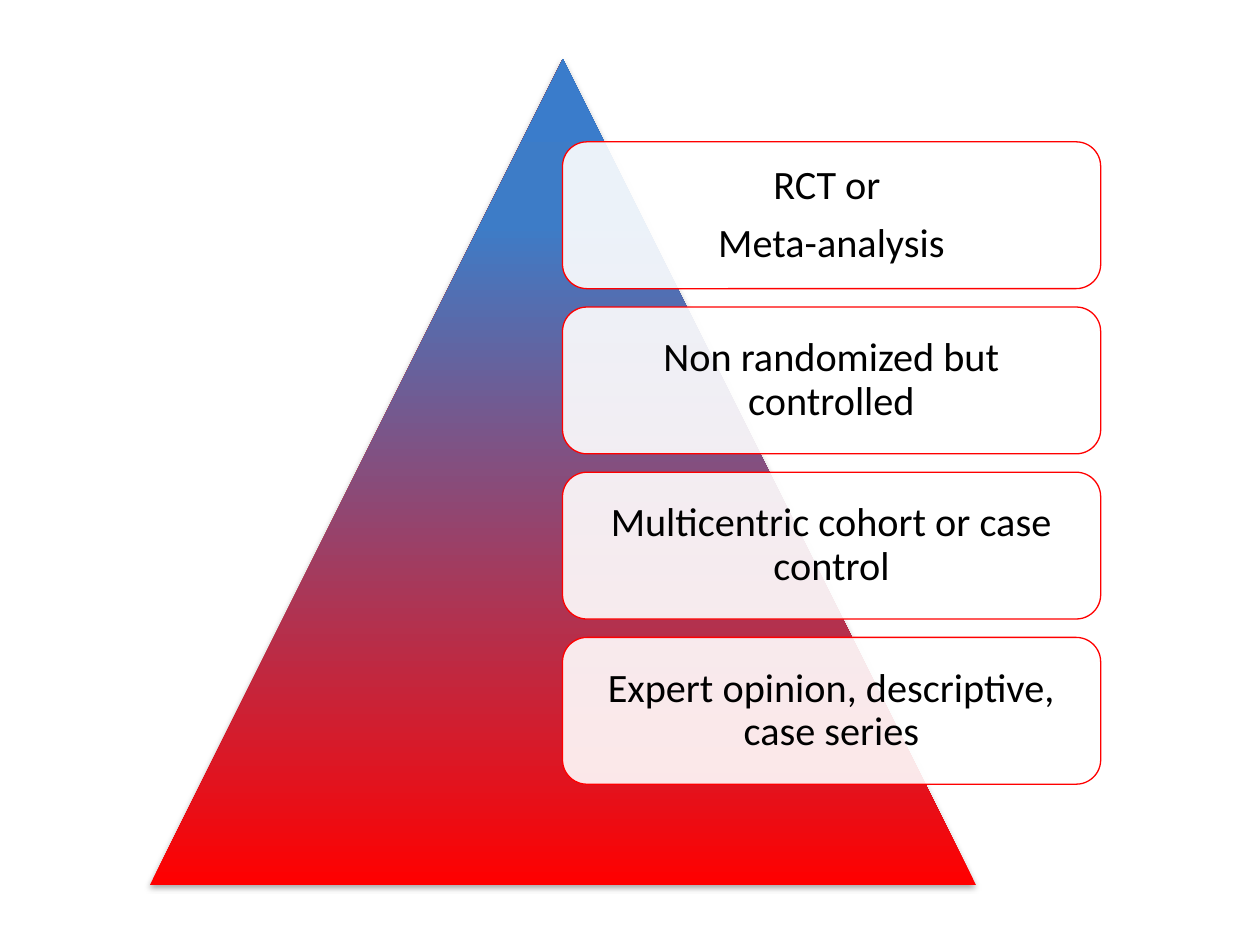
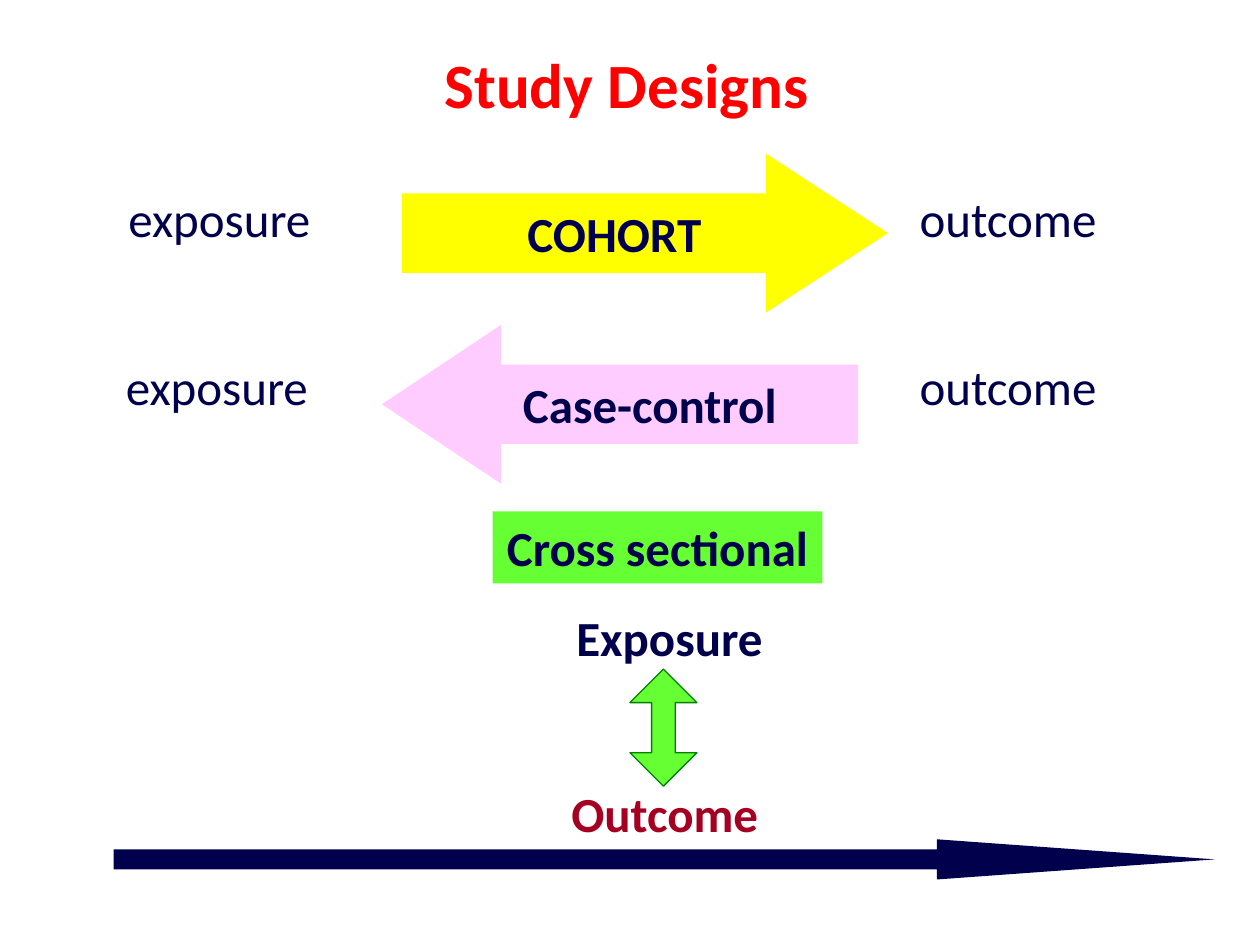
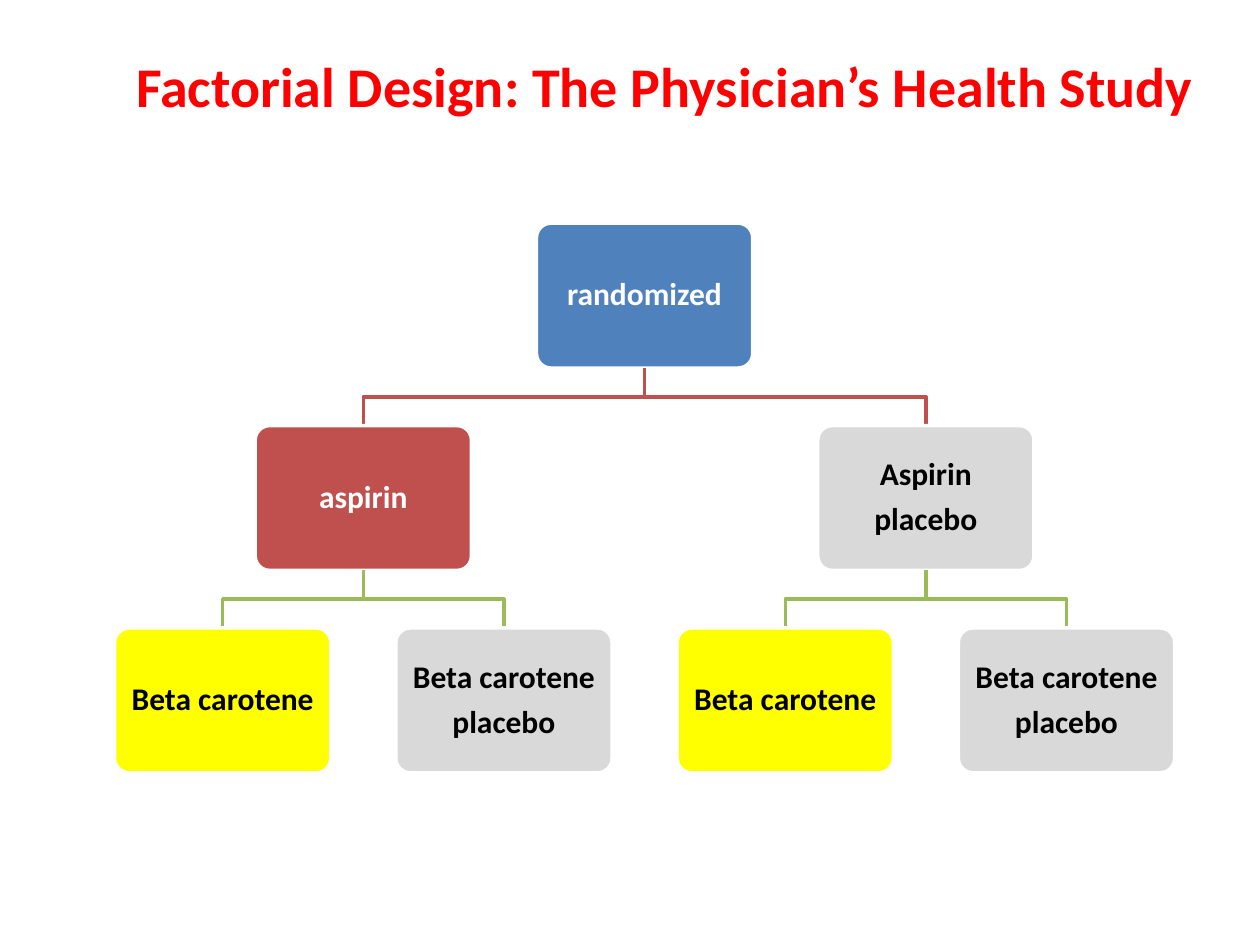
"""Build three slides on study designs: evidence pyramid, design arrows and a factorial tree."""
from copy import deepcopy
from dataclasses import dataclass
from typing import Optional

from lxml.etree import SubElement
from pptx import Presentation
from pptx.dml.color import RGBColor
from pptx.enum.shapes import MSO_SHAPE
from pptx.enum.text import MSO_ANCHOR, MSO_AUTO_SIZE, PP_ALIGN
from pptx.oxml.ns import qn
from pptx.util import Cm, Pt

FONT = "Calibri"
RED, WHITE, BLACK, NAVY = "FF0000", "FFFFFF", "000000", "00004C"
YELLOW, GREY, GREEN, BRICK = "FFFF00", "D9D9D9", "66FF33", "C0504D"
TITLE_ONLY, BLANK = 5, 6

PYRAMID_STOPS = [(0, RED), (0.8, "3D7CC7"), (1, "3A7CCB")]
EVIDENCE_LEVELS = [
    ["RCT or ", "Meta-analysis"],
    ["Non randomized but controlled"],
    ["Multicentric cohort or case control"],
    ["Expert opinion, descriptive, case series"],
]
LEVEL_TOP, LEVEL_PITCH = 2.86, 3.33

NODE_WIDTH, NODE_HEIGHT = 4.36, 2.92
TREE_TOP, TREE_PITCH = 4.5, 4.08
FIRST_LEAF_CENTRE, LEAF_PITCH = 4.49, 5.67
BRANCH_COLOURS = [BRICK, "9BBB59"]


@dataclass
class Box:
    """Position and size in centimetres."""
    left: float
    top: float
    width: float
    height: float

    def lengths(self) -> tuple:
        return Cm(self.left), Cm(self.top), Cm(self.width), Cm(self.height)


@dataclass
class TextStyle:
    """Look of a text; stacked lines are tightened and spaced by their size."""
    size: float
    colour: str = BLACK
    bold: bool = False
    align: PP_ALIGN = PP_ALIGN.CENTER
    stacked: bool = False


@dataclass
class Figure:
    """A preset shape, with adjustments and an optional label."""
    kind: MSO_SHAPE
    box: Box
    fill: str
    label: str = ""
    adjustments: tuple = ()
    line: Optional[str] = None


@dataclass
class Caption:
    """A free-standing text."""
    text: str
    box: Box
    style: TextStyle


@dataclass
class Node:
    """A box of the tree with its branches; leaf is the column of a leaf."""
    lines: list
    fill: str
    colour: str = BLACK
    children: tuple = ()
    leaf: int = 0

    def centre(self) -> float:
        if self.children:
            return sum(child.centre() for child in self.children) / len(self.children)
        return FIRST_LEAF_CENTRE + self.leaf * LEAF_PITCH


PLAIN = TextStyle(28, NAVY, align=PP_ALIGN.LEFT)
STRONG = TextStyle(28, NAVY, bold=True)

DESIGN_FIGURES = [
    Figure(MSO_SHAPE.RIGHT_ARROW, Box(8.1, 3.1, 9.8, 3.2), YELLOW, "COHORT", (0.5, 0.767)),
    Figure(MSO_SHAPE.LEFT_ARROW, Box(7.7, 6.55, 9.6, 3.2), "FFCCFF", "Case-control", (0.5, 0.75)),
    Figure(MSO_SHAPE.UP_DOWN_ARROW, Box(12.7, 13.49, 1.35, 2.36), GREEN,
           adjustments=(0.5, 0.352), line="008000"),
    Figure(MSO_SHAPE.RECTANGLE, Box(9.93, 10.31, 6.65, 1.45), GREEN, "Cross sectional"),
    Figure(MSO_SHAPE.RIGHT_ARROW, Box(2.29, 16.92, 22.2, 0.81), NAVY, adjustments=(0.5, 6.916)),
]
DESIGN_CAPTIONS = [
    Caption("exposure", Box(2.34, 3.68, 4.22, 1.45), PLAIN),
    Caption("exposure", Box(2.29, 7.06, 4.22, 1.45), PLAIN),
    Caption("outcome", Box(18.29, 3.68, 4.11, 1.45), PLAIN),
    Caption("outcome", Box(18.29, 7.06, 4.11, 1.45), PLAIN),
    Caption("Exposure", Box(11.35, 12.12, 4.29, 1.45), STRONG),
    Caption("Outcome", Box(11.1, 15.67, 4.6, 1.45), TextStyle(28, "A50021", bold=True)),
]


def carotene_pair(first_leaf: int) -> tuple:
    """Return the treatment and placebo leaves below one aspirin arm."""
    return (Node(["Beta carotene"], YELLOW, leaf=first_leaf),
            Node(["Beta carotene", "placebo"], GREY, leaf=first_leaf + 1))


FACTORIAL_TREE = Node(["randomized"], "4F81BD", WHITE, (
    Node(["aspirin"], BRICK, WHITE, carotene_pair(0)),
    Node(["Aspirin", "placebo"], GREY, BLACK, carotene_pair(2)),
))


def rgb(colour: str) -> RGBColor:
    """Turn a hex string into a colour."""
    return RGBColor.from_string(colour)


def set_line(shape, colour: Optional[str], width: float = 0.75) -> None:
    """Draw the outline of a shape, or none."""
    if colour:
        shape.line.color.rgb = rgb(colour)
        shape.line.width = Pt(width)
    else:
        shape.line.fill.background()


def add_figure(slide, figure: Figure, line_width: float = 0.75):
    """Add a flat preset shape without text."""
    shape = slide.shapes.add_shape(figure.kind, *figure.box.lengths())
    shape.shadow.inherit = False
    shape.fill.solid()
    shape.fill.fore_color.rgb = rgb(figure.fill)
    set_line(shape, figure.line, line_width)
    for index, value in enumerate(figure.adjustments):
        shape.adjustments[index] = value
    return shape


def write(shape, lines: list, style: TextStyle, wrap: bool = False,
          anchor: MSO_ANCHOR = MSO_ANCHOR.MIDDLE, inset: Optional[float] = None) -> None:
    """Write one paragraph per line into a shape."""
    frame = shape.text_frame
    frame.word_wrap = wrap
    frame.auto_size = MSO_AUTO_SIZE.NONE
    frame.vertical_anchor = anchor
    if inset is not None:
        frame.margin_left = frame.margin_right = Cm(inset)
        frame.margin_top = frame.margin_bottom = Cm(inset)
    for index, line in enumerate(lines):
        paragraph = frame.add_paragraph() if index else frame.paragraphs[0]
        paragraph.alignment = style.align
        if style.stacked:
            paragraph.line_spacing = 0.9
            paragraph.space_after = Pt(style.size * 0.35)
        run = paragraph.add_run()
        run.text = line
        run.font.name = FONT
        run.font.size = Pt(style.size)
        run.font.bold = style.bold
        run.font.color.rgb = rgb(style.colour)


def set_title(slide, text: str, box: Box, size: float) -> None:
    """Place and format the title placeholder."""
    title = slide.shapes.title
    title.left, title.top, title.width, title.height = box.lengths()
    write(title, [text], TextStyle(size, RED, bold=True, align=PP_ALIGN.LEFT))


def add_pyramid(slide) -> None:
    """Add the triangle with its gradient and soft shadow."""
    pyramid = add_figure(slide, Figure(MSO_SHAPE.ISOSCELES_TRIANGLE,
                                       Box(3.02, 1.19, 16.66, 16.66), RED))
    pyramid.fill.gradient()
    pyramid.fill.gradient_angle = 90
    properties = pyramid.element.spPr
    stops = properties.find(qn("a:gradFill")).find(qn("a:gsLst"))
    stops.append(deepcopy(stops[-1]))
    for stop, (position, colour) in zip(pyramid.fill.gradient_stops, PYRAMID_STOPS):
        stop.position = position
        stop.color.rgb = rgb(colour)
    shadow = SubElement(properties.find(qn("a:effectLst")), qn("a:outerShdw"),
                        blurRad=str(Pt(3.1)), dist=str(Pt(1.8)), dir="5400000", rotWithShape="0")
    shade = SubElement(shadow, qn("a:srgbClr"), val=BLACK)
    SubElement(shade, qn("a:alpha"), val="35000")


def add_evidence_slide(presentation) -> None:
    """Build the pyramid of evidence levels."""
    slide = presentation.slides.add_slide(presentation.slide_layouts[BLANK])
    add_pyramid(slide)
    for index, lines in enumerate(EVIDENCE_LEVELS):
        box = Box(11.34, LEVEL_TOP + index * LEVEL_PITCH, 10.85, 2.96)
        level = add_figure(slide, Figure(MSO_SHAPE.ROUNDED_RECTANGLE, box, WHITE, line=RED))
        colour = level.element.spPr.find(qn("a:solidFill")).find(qn("a:srgbClr"))
        SubElement(colour, qn("a:alpha"), val="90000")
        write(level, lines, TextStyle(23, stacked=True), wrap=True, inset=0.25)


def add_designs_slide(presentation) -> None:
    """Build the overview of study designs."""
    slide = presentation.slides.add_slide(presentation.slide_layouts[TITLE_ONLY])
    set_title(slide, "Study Designs", Box(8.71, 0.58, 12.32, 2.18), 36)
    for figure in DESIGN_FIGURES:
        shape = add_figure(slide, figure)
        if figure.label:
            write(shape, [figure.label], STRONG)
    for caption in DESIGN_CAPTIONS:
        textbox = slide.shapes.add_textbox(*caption.box.lengths())
        write(textbox, [caption.text], caption.style, anchor=MSO_ANCHOR.TOP)


def add_branch(slide, start: float, end: float, level: int) -> None:
    """Draw the elbow from a node at this level down to a child."""
    bottom = TREE_TOP + level * TREE_PITCH + NODE_HEIGHT
    child_top = TREE_TOP + (level + 1) * TREE_PITCH
    middle = (bottom + child_top) / 2
    builder = slide.shapes.build_freeform(Cm(start), Cm(bottom))
    corners = [(start, middle), (end, middle), (end, child_top)]
    builder.add_line_segments([(Cm(x), Cm(y)) for x, y in corners], close=False)
    branch = builder.convert_to_shape()
    branch.shadow.inherit = False
    branch.fill.background()
    set_line(branch, BRANCH_COLOURS[level], 2)


def add_node(slide, node: Node, level: int = 0) -> None:
    """Draw a node, then its branches and children."""
    box = Box(node.centre() - NODE_WIDTH / 2, TREE_TOP + level * TREE_PITCH,
              NODE_WIDTH, NODE_HEIGHT)
    shape = add_figure(slide, Figure(MSO_SHAPE.ROUNDED_RECTANGLE, box, node.fill,
                                     adjustments=(0.1,), line=WHITE), 2)
    write(shape, node.lines, TextStyle(18, node.colour, bold=True, stacked=True),
          wrap=True, inset=0.18)
    for child in node.children:
        add_branch(slide, node.centre(), child.centre(), level)
        add_node(slide, child, level + 1)


def add_factorial_slide(presentation) -> None:
    """Build the tree of the factorial design."""
    slide = presentation.slides.add_slide(presentation.slide_layouts[TITLE_ONLY])
    set_title(slide, "Factorial Design: The Physician’s Health Study",
              Box(2.49, 0.91, 22.02, 1.63), 32)
    add_node(slide, FACTORIAL_TREE)


def main() -> None:
    """Build and save the presentation."""
    presentation = Presentation()
    presentation.slide_width, presentation.slide_height = Cm(25.4), Cm(19.05)
    add_evidence_slide(presentation)
    add_designs_slide(presentation)
    add_factorial_slide(presentation)
    presentation.save("out.pptx")


if __name__ == "__main__":
    main()
